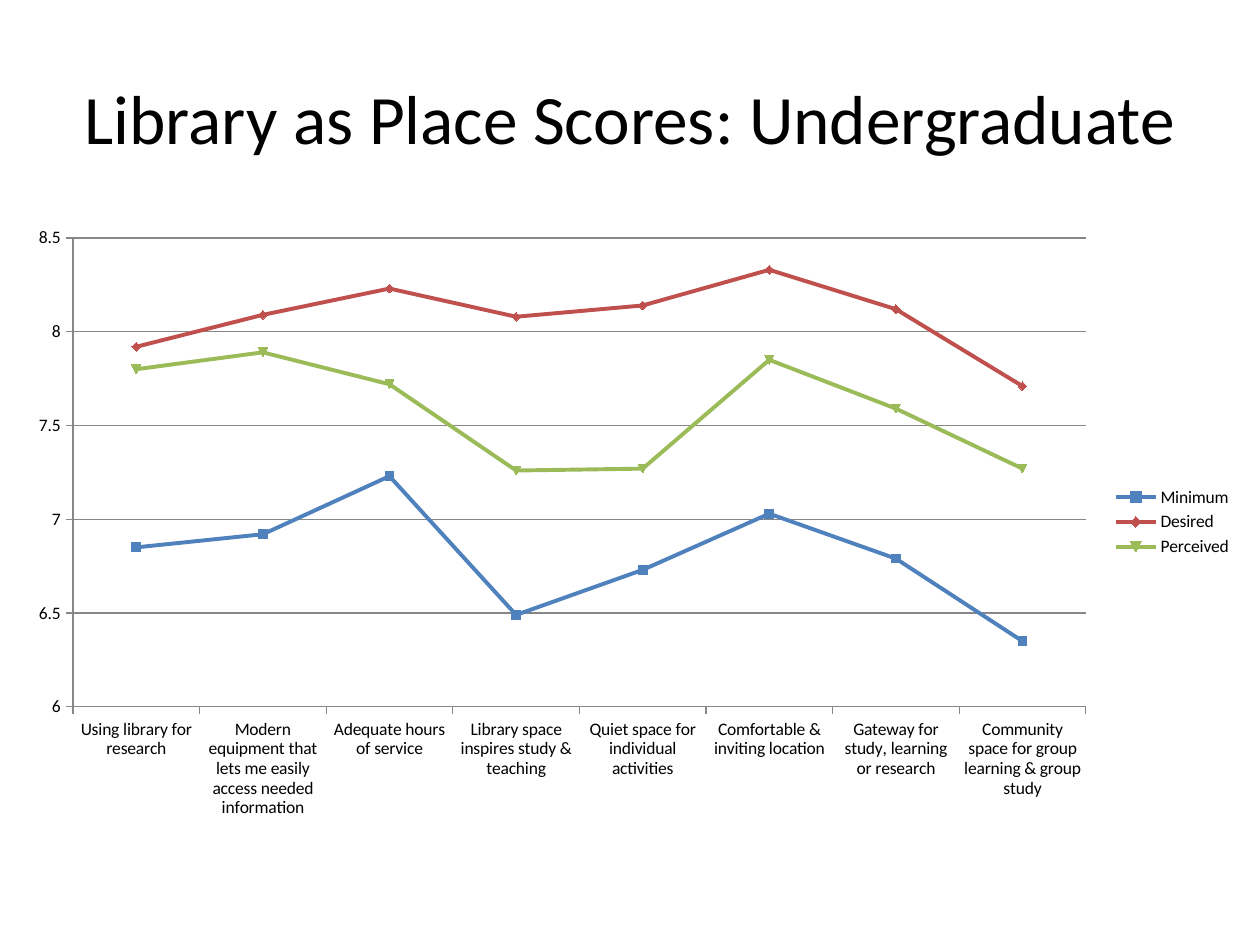
from dataclasses import dataclass

from lxml.etree import SubElement
from pptx import Presentation
from pptx.chart.data import CategoryChartData
from pptx.dml.color import RGBColor as Color
from pptx.enum.chart import XL_CHART_TYPE as ChartType
from pptx.enum.chart import XL_LEGEND_POSITION as LegendPosition
from pptx.enum.chart import XL_TICK_MARK as TickMark
from pptx.enum.text import MSO_ANCHOR as Anchor
from pptx.enum.text import MSO_AUTO_SIZE as AutoSize
from pptx.enum.text import PP_ALIGN as Align
from pptx.oxml.ns import qn
from pptx.util import Emu, Pt


@dataclass(frozen=True)
class Theme:
    """Colours and type sizes of the slide."""

    font: str = "Calibri"
    text: Color = Color.from_string("000000")
    rule: Color = Color.from_string("878787")
    title_size: float = 39.6
    chart_size: int = 10
    rule_width: float = 0.75
    series_width: float = 2.25


THEME = Theme()
PX = 914400 / 126
SLIDE_SIZE = (1260, 945)
TITLE_BOX = (63, 38, 1134, 157)
CHART_BOX = (14, 215, 1231, 614)
PLOT_BOX = (59, 23, 1013, 469)
TITLE = "Library as Place Scores: Undergraduate"
CATEGORIES = [
    "Using library for research",
    "Modern equipment that lets me easily access needed information",
    "Adequate hours of service",
    "Library space inspires study & teaching",
    "Quiet space for individual activities",
    "Comfortable & inviting location",
    "Gateway for study, learning or research",
    "Community space for group learning & group study",
]
SERIES = {
    "Minimum": ("4F81BD", (6.85, 6.92, 7.23, 6.49, 6.73, 7.03, 6.79, 6.35)),
    "Desired": ("C0504D", (7.92, 8.09, 8.23, 8.08, 8.14, 8.33, 8.12, 7.71)),
    "Perceived": ("9BBB59", (7.8, 7.89, 7.72, 7.26, 7.27, 7.85, 7.59, 7.27)),
}


def px(length):
    """Turn whole pixels into EMU."""
    return Emu(round(length * PX))


def apply(target, values):
    """Set each attribute named in a dict of format values."""
    for name, value in values.items():
        setattr(target, name, value)


def style_font(font, size):
    """Give a font the theme's face and colour."""
    apply(font, {"name": THEME.font, "size": Pt(size), "bold": False})
    font.color.rgb = THEME.text


def style_line(line, color, width):
    """Give a line its colour and width."""
    line.color.rgb = color
    line.width = Pt(width)


def add_title(slide, box):
    """Move the title placeholder into its box and fill it."""
    title = slide.shapes.title
    apply(title, dict(zip(("left", "top", "width", "height"), map(px, box))))
    frame = title.text_frame
    frame.text = TITLE
    apply(frame, {"vertical_anchor": Anchor.MIDDLE, "word_wrap": True, "auto_size": AutoSize.NONE})
    paragraph = frame.paragraphs[0]
    paragraph.alignment = Align.CENTER
    style_font(paragraph.runs[0].font, THEME.title_size)


def place_plot(chart, plot_box, chart_box):
    """Fix the inner plot area as fractions of the chart box."""
    plot_area = chart.element.find(".//" + qn("c:plotArea"))
    layout = plot_area.find(qn("c:layout"))
    if layout is None:
        layout = SubElement(plot_area, qn("c:layout"))
        plot_area.insert(0, layout)
    manual = SubElement(layout, qn("c:manualLayout"))
    width, height = chart_box[2:]
    fractions = [length / side for length, side in zip(plot_box, (width, height) * 2)]
    values = {"layoutTarget": "inner", "xMode": "edge", "yMode": "edge"}
    values.update(zip("xywh", (f"{fraction:.4f}" for fraction in fractions)))
    for name, value in values.items():
        SubElement(manual, qn(f"c:{name}")).set("val", value)


def style_axes(chart):
    """Set the scale, ticks, rules and gridlines of both axes."""
    for axis in (chart.category_axis, chart.value_axis):
        apply(axis, {"major_tick_mark": TickMark.OUTSIDE, "minor_tick_mark": TickMark.NONE})
        style_line(axis.format.line, THEME.rule, THEME.rule_width)
    value_axis = chart.value_axis
    apply(value_axis, {"minimum_scale": 6, "maximum_scale": 8.5, "major_unit": 0.5})
    apply(value_axis.tick_labels, {"number_format": "General", "number_format_is_linked": False})
    style_line(value_axis.major_gridlines.format.line, THEME.rule, THEME.rule_width)


def add_score_chart(slide, box):
    """Draw the score lines with a legend on the right."""
    data = CategoryChartData()
    data.categories = CATEGORIES
    for name, (_, values) in SERIES.items():
        data.add_series(name, values)
    chart = slide.shapes.add_chart(ChartType.LINE_MARKERS, *map(px, box), data).chart
    apply(chart, {"has_title": False, "has_legend": True})
    apply(chart.legend, {"position": LegendPosition.RIGHT, "include_in_layout": False})
    style_font(chart.font, THEME.chart_size)
    chart.plots[0].vary_by_categories = False
    style_axes(chart)
    place_plot(chart, PLOT_BOX, box)
    for series in chart.plots[0].series:
        color = Color.from_string(SERIES[series.name][0])
        series.smooth = False
        style_line(series.format.line, color, THEME.series_width)
        marker = series.marker.format
        marker.fill.solid()
        marker.fill.fore_color.rgb = color
        marker.line.color.rgb = color


def main():
    """Build and save the presentation."""
    presentation = Presentation()
    apply(presentation, dict(zip(("slide_width", "slide_height"), map(px, SLIDE_SIZE))))
    slide = presentation.slides.add_slide(presentation.slide_layouts[5])
    add_title(slide, TITLE_BOX)
    add_score_chart(slide, CHART_BOX)
    presentation.save("out.pptx")


if __name__ == "__main__":
    main()
